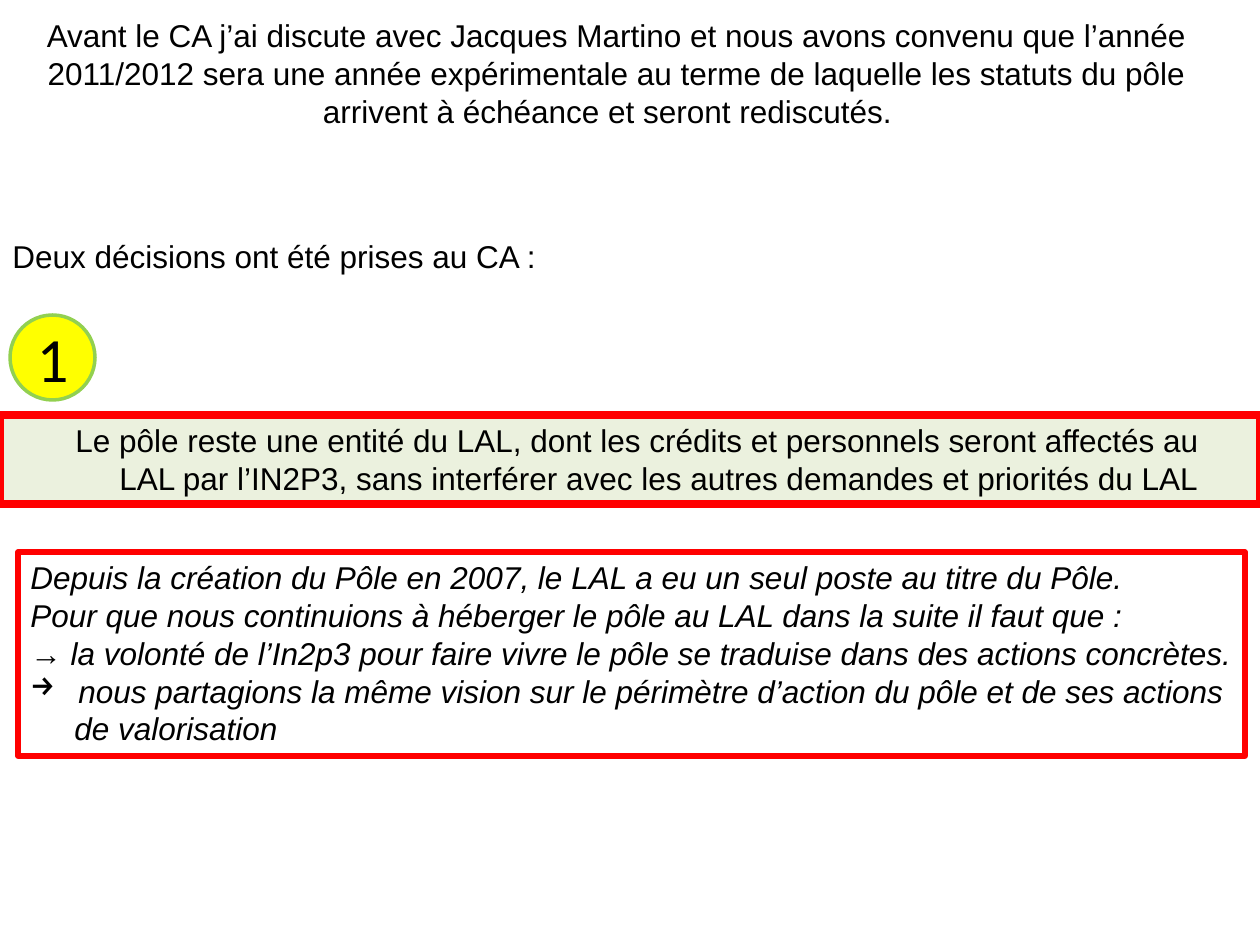
from dataclasses import dataclass
from typing import Optional

from lxml import etree
from pptx import Presentation
from pptx.dml.color import RGBColor
from pptx.enum.shapes import MSO_SHAPE
from pptx.enum.text import MSO_ANCHOR, PP_ALIGN
from pptx.oxml.ns import qn
from pptx.util import Pt

EMU_PER_PX = 914400 / 126
COLORS = {
    "text": "000000",
    "frame": "FF0000",
    "decision": "EBF1DE",
    "badge": "FFFF00",
    "badge_line": "92D050",
}


@dataclass
class Line:
    text: str
    left: int = 0
    hanging: int = 0
    right: int = 0
    bullet: Optional[str] = None


@dataclass
class Box:
    left: int
    top: int
    width: int
    height: int
    lines: list[Line]
    preset: Optional[MSO_SHAPE] = None
    fill: Optional[str] = None
    line: Optional[str] = None
    line_width: float = 0
    align: PP_ALIGN = PP_ALIGN.LEFT
    anchor: MSO_ANCHOR = MSO_ANCHOR.TOP
    font: str = "Arial"
    size: int = 18
    italic: bool = False


def px(value: int) -> int:
    return round(value * EMU_PER_PX)


def color(name: str) -> RGBColor:
    return RGBColor.from_string(COLORS[name])


def write_line(paragraph, line: Line, box: Box) -> None:
    paragraph.text = line.text
    paragraph.alignment = box.align
    properties = paragraph._p.get_or_add_pPr()
    properties.set("marL", str(px(line.left)))
    properties.set("marR", str(px(line.right)))
    properties.set("indent", str(-px(line.hanging)))
    if line.bullet:
        etree.SubElement(properties, qn("a:buChar")).set("char", line.bullet)
    font = paragraph.font
    font.name, font.size, font.italic = box.font, Pt(box.size), box.italic
    font.color.rgb = color("text")


def draw_box(slide, box: Box) -> None:
    place = [px(value) for value in (box.left, box.top, box.width, box.height)]
    if box.preset is None:
        shape = slide.shapes.add_textbox(*place)
    else:
        shape = slide.shapes.add_shape(box.preset, *place)
        shape.shadow.inherit = False
        if box.fill:
            shape.fill.solid()
            shape.fill.fore_color.rgb = color(box.fill)
        else:
            shape.fill.background()
        shape.line.color.rgb = color(box.line)
        shape.line.width = Pt(box.line_width)
    frame = shape.text_frame
    frame.word_wrap = True
    frame.vertical_anchor = box.anchor
    for index, line in enumerate(box.lines):
        paragraph = frame.add_paragraph() if index else frame.paragraphs[0]
        write_line(paragraph, line, box)


BOXES = [
    # Decision banner
    Box(0, 415, 1260, 89, [
        Line("Le pôle reste une entité du LAL, dont les crédits et personnels seront affectés au", left=63),
        Line("LAL par l’IN2P3, sans interférer avec les autres demandes et priorités du LAL", left=107),
    ], MSO_SHAPE.RECTANGLE, "decision", "frame", 4.5),
    # Introduction
    Box(21, 10, 1191, 127, [
        Line("Avant le CA j’ai discute avec Jacques Martino et nous avons convenu que l’année"),
        Line("2011/2012 sera une année expérimentale au terme de laquelle les statuts du pôle"),
        Line("arrivent à échéance et seront rediscutés.", right=18),
    ], align=PP_ALIGN.CENTER),
    Box(0, 231, 572, 50, [Line("Deux décisions ont été prises au CA :")]),
    # Conditions
    Box(18, 552, 1227, 204, [
        Line("Depuis la création du Pôle en 2007, le LAL a eu un seul poste au titre du Pôle."),
        Line("Pour que nous continuions à héberger le pôle au LAL dans la suite il faut que :"),
        Line("→ la volonté de l’In2p3 pour faire vivre le pôle se traduise dans des actions concrètes."),
        Line("nous partagions la même vision sur le périmètre d’action du pôle et de ses actions",
             left=48, hanging=48, bullet="→"),
        Line("de valorisation", left=44),
    ], MSO_SHAPE.RECTANGLE, None, "frame", 3, italic=True),
    # Number badge
    Box(10, 315, 85, 85, [Line("1")], MSO_SHAPE.OVAL, "badge", "badge_line", 2,
        PP_ALIGN.CENTER, MSO_ANCHOR.MIDDLE, "Calibri", 36),
]


def main() -> None:
    presentation = Presentation()
    presentation.slide_width, presentation.slide_height = px(1260), px(945)
    slide = presentation.slides.add_slide(presentation.slide_layouts[6])
    for box in BOXES:
        draw_box(slide, box)
    presentation.save("out.pptx")


if __name__ == "__main__":
    main()
